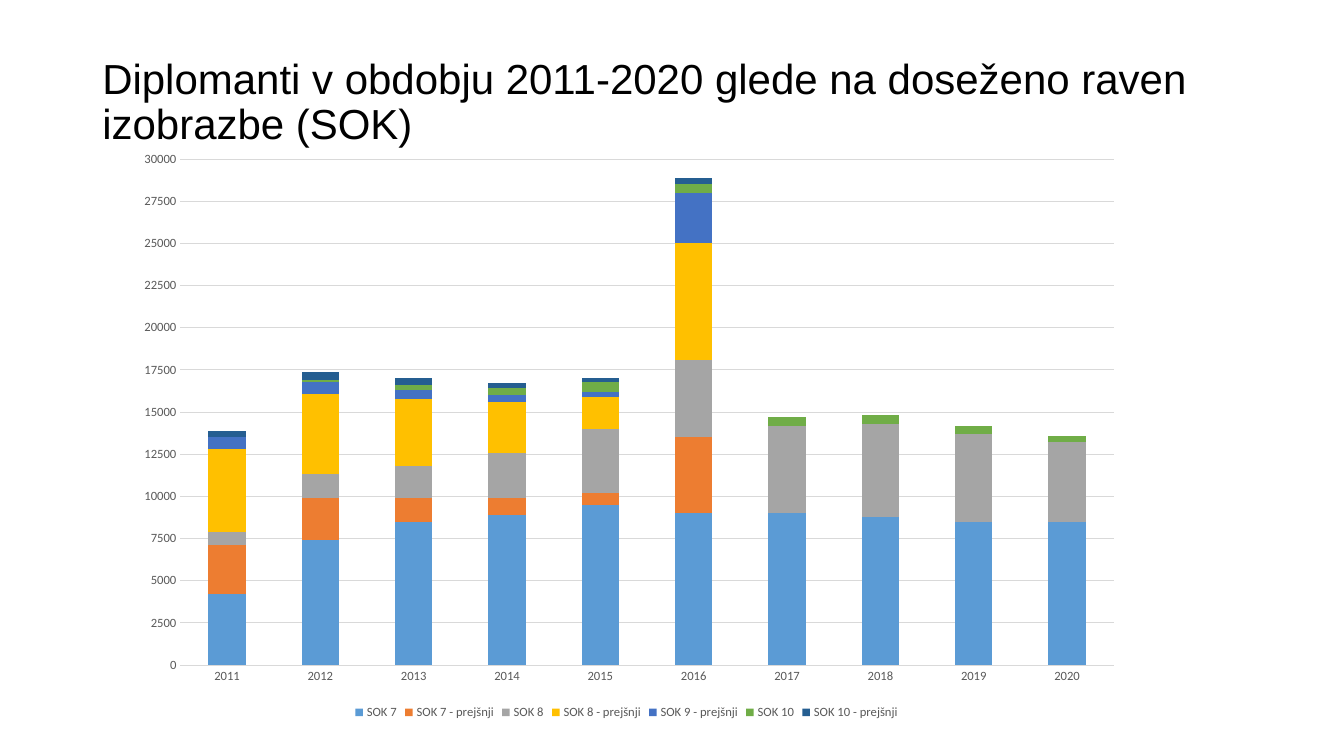
"""Build a slide with a stacked column chart of graduates by education level."""
import pptx
import pptx.chart.data
import pptx.dml.color
import pptx.enum.chart
import pptx.enum.text
import pptx.oxml
import pptx.oxml.ns
import pptx.util

Pt = pptx.util.Pt
COLORS = {
    "title": "000000",
    "label": "595959",
    "grid": "D9D9D9",
    "SOK 7": "5B9BD5",
    "SOK 7 - prejšnji": "ED7D31",
    "SOK 8": "A5A5A5",
    "SOK 8 - prejšnji": "FFC000",
    "SOK 9 - prejšnji": "4472C4",
    "SOK 10": "70AD47",
    "SOK 10 - prejšnji": "255E91",
}
GRADUATES = {
    "SOK 7": [4200, 7400, 8500, 8900, 9500, 9000, 9000, 8800, 8500, 8500],
    "SOK 7 - prejšnji": [2900, 2500, 1400, 1000, 700, 4500],
    "SOK 8": [800, 1400, 1900, 2700, 3800, 4600, 5200, 5500, 5200, 4700],
    "SOK 8 - prejšnji": [4900, 4800, 4000, 3000, 1900, 6900],
    "SOK 9 - prejšnji": [700, 700, 500, 400, 300, 3000],
    "SOK 10": [0, 100, 300, 400, 600, 500, 500, 500, 500, 400],
    "SOK 10 - prejšnji": [400, 500, 400, 300, 200, 400],
}
YEARS = range(2011, 2021)


def color(name):
    return pptx.dml.color.RGBColor.from_string(COLORS[name])


def style_font(font, face, size, name):
    font.name = face
    font.size = Pt(size)
    font.color.rgb = color(name)


deck = pptx.Presentation()
deck.slide_width, deck.slide_height = Pt(960), Pt(540)
page = deck.slides.add_slide(deck.slide_layouts[6])

box = page.shapes.add_textbox(Pt(66), Pt(21.6), Pt(828), Pt(104.4))
box.text_frame.word_wrap = True
box.text_frame.vertical_anchor = pptx.enum.text.MSO_ANCHOR.MIDDLE
para = box.text_frame.paragraphs[0]
para.line_spacing = 0.9
span = para.add_run()
span.text = "Diplomanti v obdobju 2011-2020 glede na doseženo raven izobrazbe (SOK)"
style_font(span.font, "Arial", 30, "title")

data = pptx.chart.data.CategoryChartData()
data.categories = [str(year) for year in YEARS]
for level, counts in GRADUATES.items():
    data.add_series(level, counts + [None] * (len(YEARS) - len(counts)))
chart = page.shapes.add_chart(
    pptx.enum.chart.XL_CHART_TYPE.COLUMN_STACKED,
    Pt(87.84), Pt(98.64), Pt(719.28), Pt(418.32), data,
).chart
style_font(chart.font, "Calibri", 10, "title")
chart.has_title = False

plot = chart.plots[0]
plot.gap_width = 150
plot.overlap = 100
plot.vary_by_categories = False
for series in plot.series:
    series.format.fill.solid()
    series.format.fill.fore_color.rgb = color(series.name)
    series.invert_if_negative = False

for axis in (chart.category_axis, chart.value_axis):
    axis.major_tick_mark = pptx.enum.chart.XL_TICK_MARK.NONE
    axis.minor_tick_mark = pptx.enum.chart.XL_TICK_MARK.NONE
    style_font(axis.tick_labels.font, "Calibri", 9, "label")
chart.value_axis.minimum_scale = 0
chart.value_axis.maximum_scale = 30000
chart.value_axis.major_unit = 2500
chart.value_axis.format.line.fill.background()
for line in (chart.category_axis.format.line, chart.value_axis.major_gridlines.format.line):
    line.color.rgb = color("grid")
    line.width = Pt(0.75)

chart.has_legend = True
chart.legend.position = pptx.enum.chart.XL_LEGEND_POSITION.BOTTOM
chart.legend.include_in_layout = False
style_font(chart.legend.font, "Calibri", 9, "label")

plot_area = chart.element.find(".//" + pptx.oxml.ns.qn("c:plotArea"))
for old_layout in plot_area.findall(pptx.oxml.ns.qn("c:layout")):
    plot_area.remove(old_layout)
settings = {"layoutTarget": "inner", "xMode": "edge", "yMode": "edge",
            "x": 0.057, "y": 0.036, "w": 0.927, "h": 0.864}
items = "".join(f'<c:{key} val="{value}"/>' for key, value in settings.items())
plot_area.insert(0, pptx.oxml.parse_xml(
    f'<c:layout {pptx.oxml.ns.nsdecls("c")}><c:manualLayout>{items}</c:manualLayout></c:layout>'
))

deck.save("out.pptx")
